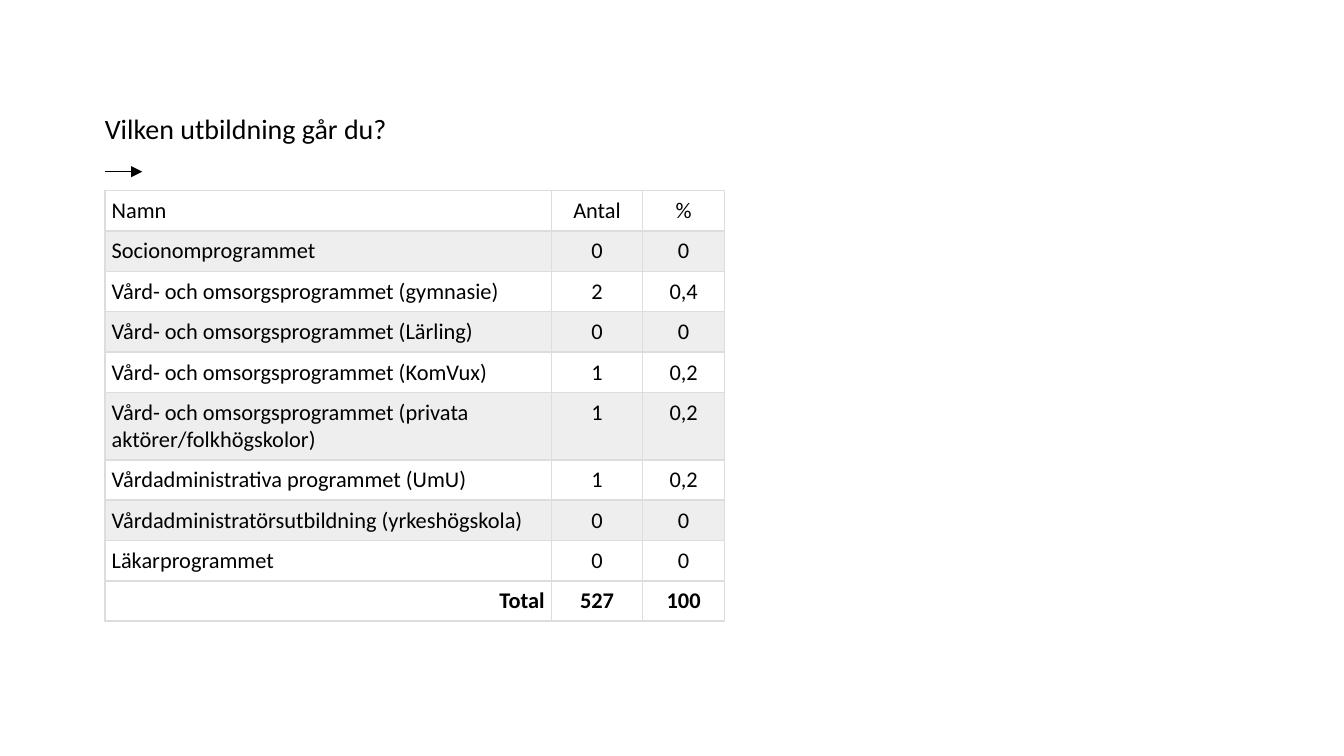
import pptx
import pptx.dml.color
import pptx.enum.shapes
import pptx.enum.text
import pptx.oxml
import pptx.oxml.ns
import pptx.util

Pt = pptx.util.Pt
RGBColor = pptx.dml.color.RGBColor
Align = pptx.enum.text.PP_ALIGN
Anchor = pptx.enum.text.MSO_ANCHOR

# Content
TITLE = "Vilken utbildning går du?"
ROWS = [
    ("Namn", "Antal", "%"),
    ("Socionomprogrammet", "0", "0"),
    ("Vård- och omsorgsprogrammet (gymnasie)", "2", "0,4"),
    ("Vård- och omsorgsprogrammet (Lärling)", "0", "0"),
    ("Vård- och omsorgsprogrammet (KomVux)", "1", "0,2"),
    ("Vård- och omsorgsprogrammet (privata aktörer/folkhögskolor)", "1", "0,2"),
    ("Vårdadministrativa programmet (UmU)", "1", "0,2"),
    ("Vårdadministratörsutbildning (yrkeshögskola)", "0", "0"),
    ("Läkarprogrammet", "0", "0"),
    ("Total", "527", "100"),
]

# Style and layout
FONT = "Calibri"
BLACK = RGBColor(0, 0, 0)
WHITE = RGBColor(0xFF, 0xFF, 0xFF)
BAND = RGBColor(0xEE, 0xEE, 0xEE)
BORDER = RGBColor(0xDD, 0xDD, 0xDD)
LEFT = 56.2
TABLE_TOP = 102.1
COLUMN_WIDTHS = [239.2, 48.9, 43.9]
ROW_HEIGHT, TALL_ROW_HEIGHT = 21.6, 36.1
TALL_ROW = 5
CELL_MARGIN = 3.6


def add_text(paragraph, text, size, bold=False):
    run = paragraph.add_run()
    run.text = text
    run.font.name = FONT
    run.font.size = Pt(size)
    run.font.bold = bold
    run.font.color.rgb = BLACK


def add_borders(cell):
    properties = cell._tc.get_or_add_tcPr()
    for index, side in enumerate(("lnL", "lnR", "lnT", "lnB")):
        border = pptx.oxml.parse_xml(
            f'<a:{side} {pptx.oxml.ns.nsdecls("a")} w="{Pt(1)}"><a:solidFill>'
            f'<a:srgbClr val="{BORDER}"/></a:solidFill></a:{side}>')
        properties.insert(index, border)


def add_title(slide):
    box = slide.shapes.add_textbox(Pt(LEFT), Pt(56.2), Pt(609), Pt(25.2))
    frame = box.text_frame
    frame.word_wrap = True
    frame.vertical_anchor = Anchor.MIDDLE
    frame.margin_left = frame.margin_right = 0
    frame.margin_top = frame.margin_bottom = Pt(3.6)
    add_text(frame.paragraphs[0], TITLE, 15)


def add_arrow(slide):
    arrow = slide.shapes.add_connector(
        pptx.enum.shapes.MSO_CONNECTOR.STRAIGHT,
        Pt(LEFT), Pt(92), Pt(LEFT + 20), Pt(92))
    arrow.line.color.rgb = BLACK
    arrow.line.width = Pt(0.75)
    namespace = pptx.oxml.ns.nsdecls("a")
    arrow.line._get_or_add_ln().append(
        pptx.oxml.parse_xml(f'<a:tailEnd {namespace} type="triangle"/>'))
    arrow._element.spPr.append(pptx.oxml.parse_xml(f"<a:effectLst {namespace}/>"))


def add_result_table(slide):
    heights = [TALL_ROW_HEIGHT if index == TALL_ROW else ROW_HEIGHT
               for index in range(len(ROWS))]
    table = slide.shapes.add_table(
        len(ROWS), len(COLUMN_WIDTHS), Pt(LEFT), Pt(TABLE_TOP),
        Pt(sum(COLUMN_WIDTHS)), Pt(sum(heights))).table
    table.first_row = table.horz_banding = False
    for column, width in zip(table.columns, COLUMN_WIDTHS):
        column.width = Pt(width)

    for row_index, values in enumerate(ROWS):
        table.rows[row_index].height = Pt(heights[row_index])
        is_total = row_index == len(ROWS) - 1
        # Every second row is shaded, except the total
        shaded = row_index % 2 == 1 and not is_total
        name_alignment = Align.RIGHT if is_total else Align.LEFT
        for column_index, value in enumerate(values):
            cell = table.cell(row_index, column_index)
            cell.margin_left = cell.margin_right = Pt(CELL_MARGIN)
            cell.margin_top = cell.margin_bottom = Pt(CELL_MARGIN)
            cell.fill.solid()
            cell.fill.fore_color.rgb = BAND if shaded else WHITE
            add_borders(cell)
            paragraph = cell.text_frame.paragraphs[0]
            paragraph.alignment = Align.CENTER if column_index else name_alignment
            add_text(paragraph, value, 12, bold=is_total)


def main():
    presentation = pptx.Presentation()
    presentation.slide_width = Pt(720)
    presentation.slide_height = Pt(405)
    slide = presentation.slides.add_slide(presentation.slide_layouts[6])
    add_title(slide)
    add_arrow(slide)
    add_result_table(slide)
    presentation.save("out.pptx")


if __name__ == "__main__":
    main()
